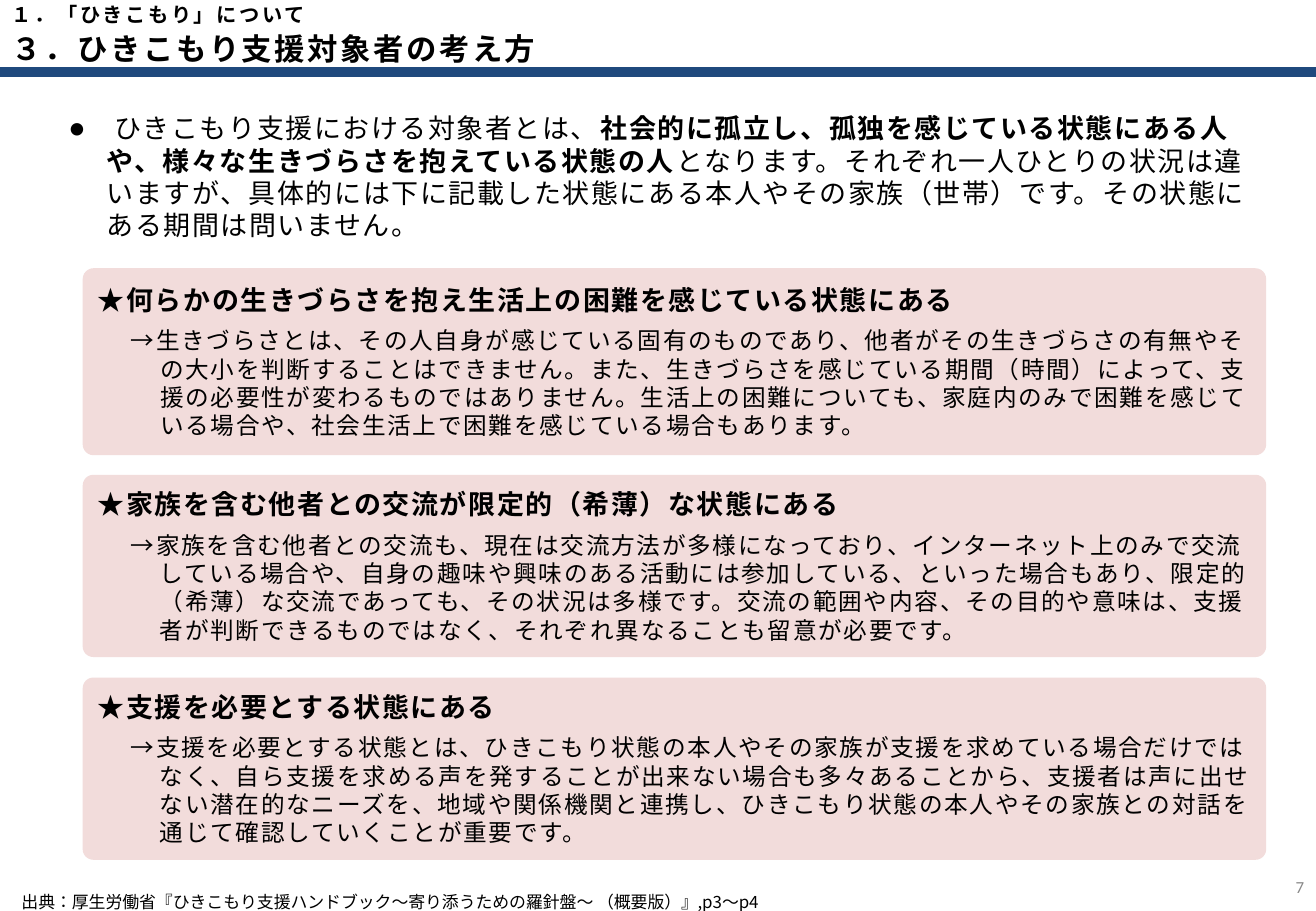
from dataclasses import dataclass

from lxml import etree
from pptx import Presentation
from pptx.dml.color import RGBColor
from pptx.enum.shapes import MSO_CONNECTOR, MSO_SHAPE
from pptx.enum.text import MSO_ANCHOR, PP_ALIGN
from pptx.oxml.ns import qn
from pptx.shapes.base import BaseShape
from pptx.slide import Slide
from pptx.util import Cm, Pt

STRAIGHT = MSO_CONNECTOR.STRAIGHT
ROUNDED = MSO_SHAPE.ROUNDED_RECTANGLE
TOP, MIDDLE = MSO_ANCHOR.TOP, MSO_ANCHOR.MIDDLE
LEFT, RIGHT = PP_ALIGN.LEFT, PP_ALIGN.RIGHT

COLORS = {"rule": "1F497D", "card": "F2DCDB", "text": "000000", "page": "898989"}
JAPANESE, LATIN = "Noto Sans CJK JP", "Calibri"
SLIDE_WIDTH, SLIDE_HEIGHT = 27.51, 19.05
RULE_Y = 1.5
CARD_LEFT, CARD_WIDTH = 1.73, 24.74
CARD_CORNER = 0.058
LINE_FACTOR = 1.2


@dataclass(frozen=True)
class Run:
    text: str
    bold: bool = False


@dataclass(frozen=True)
class Paragraph:
    runs: tuple[Run, ...]
    size: float
    spacing: float = 0
    indent: float = 0
    hanging: float = 0
    before: float = 0
    bullet: str = ""
    align: PP_ALIGN = LEFT
    font: str = JAPANESE
    color: str = "text"


@dataclass(frozen=True)
class Label:
    box: tuple[float, float, float, float]
    paragraph: Paragraph
    anchor: MSO_ANCHOR = MIDDLE
    inset: float = 0.13


@dataclass(frozen=True)
class Card:
    top: float
    height: float
    heading: str
    body: str


LABELS = (
    Label((26.47, 18.03, 1.04, 1.02),
          Paragraph((Run("7"),), 10, align=RIGHT, font=LATIN, color="page")),
    Label((0.2, 18.64, 22.81, 0.41),
          Paragraph((Run("出典：厚生労働省『ひきこもり支援ハンドブック～寄り添うための羅針盤～ "
                         "（概要版）』,p3～p4"),), 10),
          anchor=TOP, inset=0),
    Label((1.19, 2.21, 25.15, 3.48),
          Paragraph((
              Run(" ひきこもり支援における対象者とは、"),
              Run("社会的に孤立し、孤独を感じている状態にある人や、"
                  "様々な生きづらさを抱えている状態の人", bold=True),
              Run("となります。それぞれ一人ひとりの状況は違いますが、具体的には下に記載した状態にある"
                  "本人やその家族（世帯）です。その状態にある期間は問いません。"),
          ), 16, spacing=1, indent=0.79, hanging=0.79, bullet="●"),
          anchor=TOP),
    Label((0, 0.51, 23.04, 0.99),
          Paragraph((Run("３．ひきこもり支援対象者の考え方", bold=True),), 18, spacing=1.5)),
    Label((0, 0.03, 23.04, 0.53),
          Paragraph((Run("１．「ひきこもり」について", bold=True),), 12, spacing=1.5)),
)

CARDS = (
    Card(5.61, 3.91, "★何らかの生きづらさを抱え生活上の困難を感じている状態にある",
         "→生きづらさとは、その人自身が感じている固有のものであり、他者がその生きづらさの有無や"
         "その大小を判断することはできません。また、生きづらさを感じている期間（時間）によって、"
         "支援の必要性が変わるものではありません。生活上の困難についても、家庭内のみで困難を"
         "感じている場合や、社会生活上で困難を感じている場合もあります。"),
    Card(9.93, 3.81, "★家族を含む他者との交流が限定的（希薄）な状態にある",
         "→家族を含む他者との交流も、現在は交流方法が多様になっており、インターネット上のみで"
         "交流している場合や、自身の趣味や興味のある活動には参加している、といった場合もあり、"
         "限定的（希薄）な交流であっても、その状況は多様です。交流の範囲や内容、その目的や意味は、"
         "支援者が判断できるものではなく、それぞれ異なることも留意が必要です。"),
    Card(14.17, 3.81, "★支援を必要とする状態にある",
         "→支援を必要とする状態とは、ひきこもり状態の本人やその家族が支援を求めている場合だけでは"
         "なく、自ら支援を求める声を発することが出来ない場合も多々あることから、支援者は声に"
         "出せない潜在的なニーズを、地域や関係機関と連携し、ひきこもり状態の本人やその家族との"
         "対話を通じて確認していくことが重要です。"),
)


def apply_format(target: object, values: dict[str, object]) -> None:
    for name, value in values.items():
        setattr(target, name, value)


def write_text(shape: BaseShape, paragraphs: tuple[Paragraph, ...],
               anchor: MSO_ANCHOR = MIDDLE, inset: float = 0.13) -> None:
    frame = shape.text_frame
    apply_format(frame, {
        "word_wrap": True, "vertical_anchor": anchor,
        "margin_left": Cm(0.25), "margin_right": Cm(0.25),
        "margin_top": Cm(inset), "margin_bottom": Cm(inset),
    })
    for index, content in enumerate(paragraphs):
        paragraph = frame.add_paragraph() if index else frame.paragraphs[0]
        apply_format(paragraph, {
            "alignment": content.align,
            "line_spacing": Pt(content.size * LINE_FACTOR),
            "space_before": Pt(content.before),
        })
        properties = paragraph._p.get_or_add_pPr()
        properties.set("marL", str(Cm(content.indent)))
        properties.set("indent", str(-Cm(content.hanging)))
        if content.bullet:
            etree.SubElement(properties, qn("a:buFont"), typeface=LATIN)
            etree.SubElement(properties, qn("a:buChar"), char=content.bullet)
        for part in content.runs:
            run = paragraph.add_run()
            run.text = part.text
            apply_format(run.font, {
                "size": Pt(content.size), "bold": part.bold, "name": content.font,
            })
            run.font.color.rgb = RGBColor.from_string(COLORS[content.color])
            run_properties = run._r.get_or_add_rPr()
            run_properties.set("lang", "ja-JP")
            run_properties.set("spc", str(int(content.spacing * 100)))
            etree.SubElement(run_properties, qn("a:ea"), typeface=content.font)


def add_rule(slide: Slide) -> None:
    """Draw the thick line under the title."""
    rule = slide.shapes.add_connector(
        STRAIGHT, Cm(0), Cm(RULE_Y), Cm(SLIDE_WIDTH), Cm(RULE_Y))
    rule.line.color.rgb = RGBColor.from_string(COLORS["rule"])
    rule.line.width = Pt(6)
    etree.SubElement(rule._element.spPr, qn("a:effectLst"))


def add_label(slide: Slide, label: Label) -> None:
    textbox = slide.shapes.add_textbox(*map(Cm, label.box))
    write_text(textbox, (label.paragraph,), label.anchor, label.inset)


def add_card(slide: Slide, card: Card) -> None:
    panel = slide.shapes.add_shape(
        ROUNDED, Cm(CARD_LEFT), Cm(card.top), Cm(CARD_WIDTH), Cm(card.height))
    panel.adjustments[0] = CARD_CORNER
    panel.shadow.inherit = False
    panel.fill.solid()
    panel.fill.fore_color.rgb = RGBColor.from_string(COLORS["card"])
    panel.line.fill.background()
    write_text(panel, (
        Paragraph((Run(card.heading, bold=True),), 16, spacing=1, indent=0.99, hanging=0.99),
        Paragraph((Run(card.body),), 14, spacing=1, indent=1.3, hanging=0.61, before=6),
    ))


def main() -> None:
    presentation = Presentation()
    presentation.slide_width = Cm(SLIDE_WIDTH)
    presentation.slide_height = Cm(SLIDE_HEIGHT)
    slide = presentation.slides.add_slide(presentation.slide_layouts[6])
    add_rule(slide)
    for label in LABELS:
        add_label(slide, label)
    for card in CARDS:
        add_card(slide, card)
    presentation.save("out.pptx")


if __name__ == "__main__":
    main()
